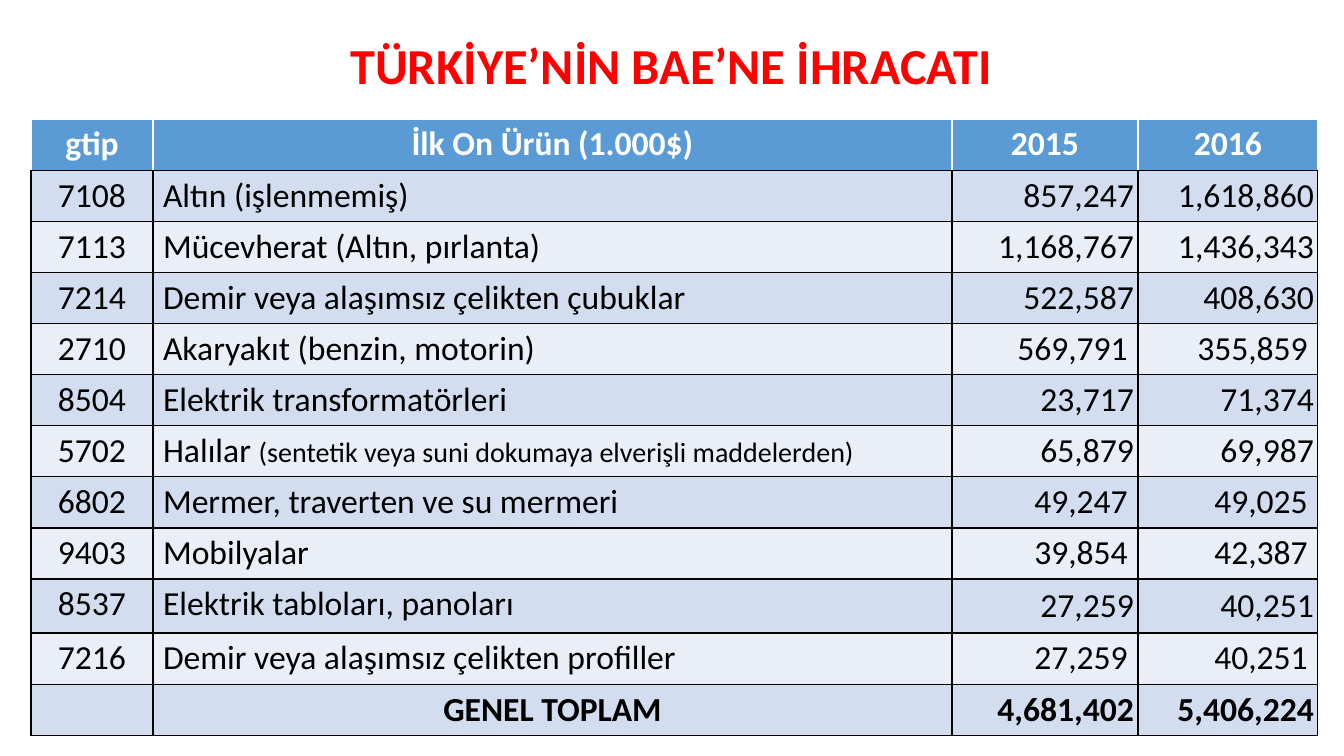
"""Builds a slide with a table of Turkey's ten leading exports to the UAE."""
import pptx
import pptx.dml.color
import pptx.enum.text
import pptx.oxml
import pptx.oxml.ns
import pptx.util

TITLE = "TÜRKİYE’NİN BAE’NE İHRACATI"
HEADER = ("gtip", "İlk On Ürün (1.000$)", "2015", "2016")
PRODUCTS = [
    ("7108", "Altın (işlenmemiş)", "857,247", "1,618,860"),
    ("7113", "Mücevherat (Altın, pırlanta)", "1,168,767", "1,436,343"),
    ("7214", "Demir veya alaşımsız çelikten çubuklar", "522,587", "408,630"),
    ("2710", "Akaryakıt (benzin, motorin)", "569,791", "355,859"),
    ("8504", "Elektrik transformatörleri", "23,717", "71,374"),
    ("5702", "Halılar ", "65,879", "69,987"),
    ("6802", "Mermer, traverten ve su mermeri", "49,247", "49,025"),
    ("9403", "Mobilyalar", "39,854", "42,387"),
    ("8537", "Elektrik tabloları, panoları", "27,259", "40,251"),
    ("7216", "Demir veya alaşımsız çelikten profiller", "27,259", "40,251"),
]
TOTAL = ("", "GENEL TOPLAM", "4,681,402", "5,406,224")
DETAILS = {"5702": "(sentetik veya suni dokumaya elverişli maddelerden)"}
WIDE_MARGIN_CODES = {"2710", "6802", "9403", "7216"}
TALL_ROWS = {"8537": 54}

COLORS = {"title": "FF0000", "header": "5B9BD5", "white": "FFFFFF",
          "black": "000000", "odd": "D2DEEF", "even": "EAEFF7"}
FONT = "Calibri"
PX = 914400 / 100.8
SLIDE = (1344, 756)
TITLE_BOX = (92, 40, 1159, 56)
TABLE_LEFT, TABLE_TOP = 31, 119
COLUMNS = (122, 799, 186, 180)
ROW_HEIGHT = 51
TIGHT = 4
ALIGN = pptx.enum.text.PP_ALIGN
MIDDLE = pptx.enum.text.MSO_ANCHOR.MIDDLE


def px(n):
    return pptx.util.Emu(round(n * PX))


def rgb(name):
    return pptx.dml.color.RGBColor.from_string(COLORS[name])


def write(p, text, size=24, color="black", bold=False, align=ALIGN.LEFT):
    p.alignment = align
    r = p.add_run()
    r.text = text
    r.font.name = FONT
    r.font.size = pptx.util.Pt(size)
    r.font.bold = bold
    r.font.color.rgb = rgb(color)


def set_borders(cell, sides):
    tc_pr = cell._tc.get_or_add_tcPr()
    for side in "LRTB":
        tc_pr.append(pptx.oxml.parse_xml(
            f'<a:ln{side} {pptx.oxml.ns.nsdecls("a")} w="12700"><a:solidFill>'
            f'<a:srgbClr val="{COLORS[sides[side]]}"/></a:solidFill></a:ln{side}>'))


def fill_cell(cell, row, col, values, last):
    header, total = row == 0, row == last
    code = values[0]
    edge = "white" if header else "black"
    set_borders(cell, {"L": edge, "R": edge, "T": edge, "B": "black"})
    cell.fill.solid()
    cell.fill.fore_color.rgb = rgb("header" if header else "odd" if row % 2 else "even")
    if col >= 2 and not header and code not in WIDE_MARGIN_CODES:
        cell.vertical_anchor = MIDDLE
        cell.margin_left = cell.margin_right = px(TIGHT)
        cell.margin_top = cell.margin_bottom = px(TIGHT)
    if not values[col]:
        return
    if header or col == 0 or (total and col == 1):
        align = ALIGN.CENTER
    else:
        align = ALIGN.LEFT if col == 1 else ALIGN.RIGHT
    p = cell.text_frame.paragraphs[0]
    write(p, values[col], color=edge, bold=header or total, align=align)
    if col == 1 and code in DETAILS:
        write(p, DETAILS[code], size=20)


def main():
    prs = pptx.Presentation()
    prs.slide_width, prs.slide_height = map(px, SLIDE)
    s = prs.slides.add_slide(prs.slide_layouts[5])

    title = s.shapes.title
    title.left, title.top, title.width, title.height = map(px, TITLE_BOX)
    tf = title.text_frame
    tf.auto_size = pptx.enum.text.MSO_AUTO_SIZE.NONE
    tf.vertical_anchor = MIDDLE
    p = tf.paragraphs[0]
    p.line_spacing = 0.9
    write(p, TITLE, size=36, color="title", bold=True, align=ALIGN.CENTER)

    rows = [HEADER, *PRODUCTS, TOTAL]
    heights = [TALL_ROWS.get(values[0], ROW_HEIGHT) for values in rows]
    table = s.shapes.add_table(len(rows), len(COLUMNS), px(TABLE_LEFT), px(TABLE_TOP),
                               px(sum(COLUMNS)), px(sum(heights))).table
    for col, width in enumerate(COLUMNS):
        table.columns[col].width = px(width)
    for row, values in enumerate(rows):
        table.rows[row].height = px(heights[row])
        for col in range(len(COLUMNS)):
            fill_cell(table.cell(row, col), row, col, values, len(rows) - 1)

    prs.save("out.pptx")


if __name__ == "__main__":
    main()
